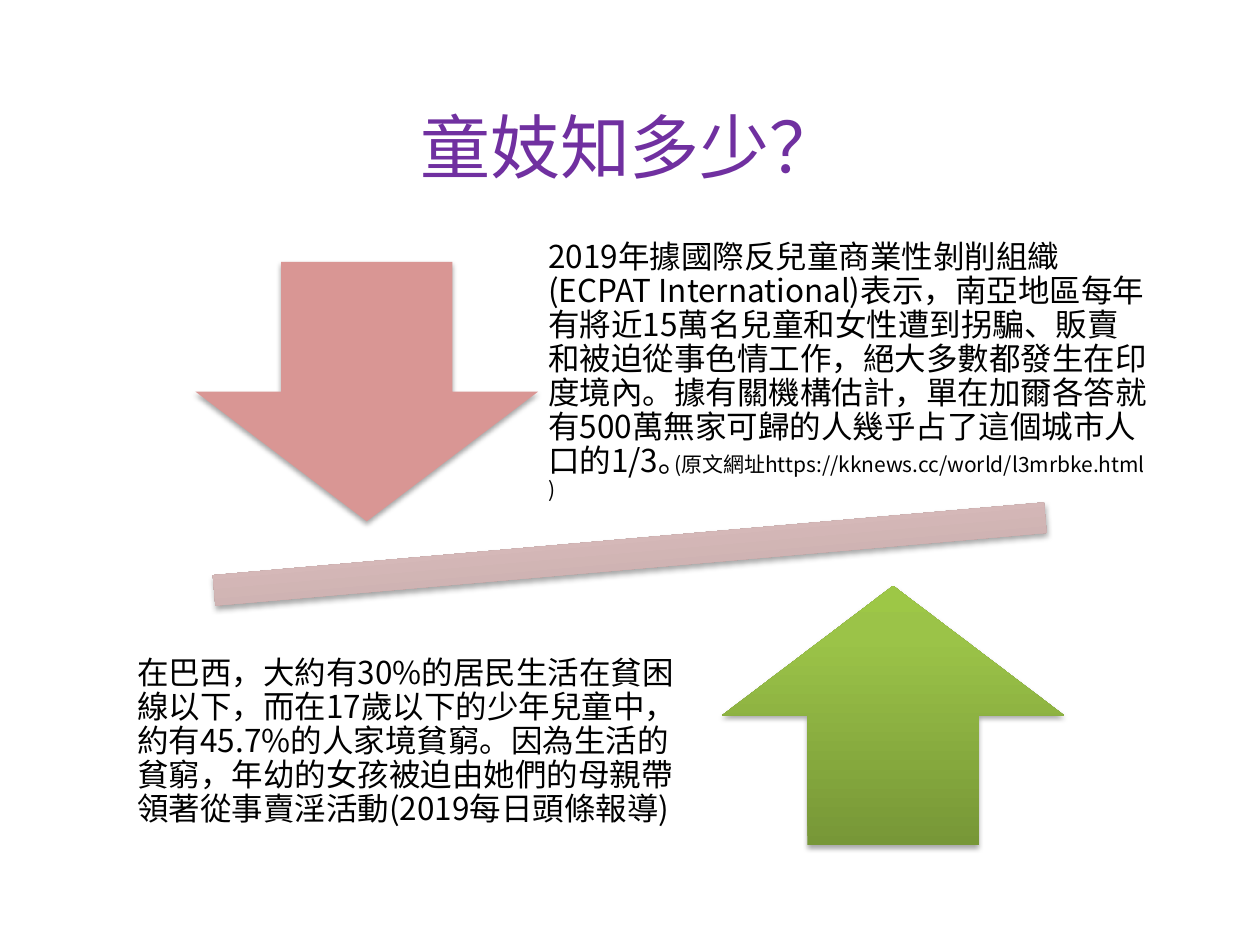
from copy import deepcopy

from lxml import etree
from pptx import Presentation
from pptx.dml.color import RGBColor
from pptx.enum.shapes import MSO_SHAPE
from pptx.enum.text import MSO_ANCHOR, PP_ALIGN
from pptx.oxml.ns import qn
from pptx.util import Cm, Pt

DOWN = MSO_SHAPE.DOWN_ARROW
UP = MSO_SHAPE.UP_ARROW
BAR = MSO_SHAPE.MATH_MINUS
MIDDLE = MSO_ANCHOR.MIDDLE
CENTER = PP_ALIGN.CENTER
LEFT = PP_ALIGN.LEFT

FONT = "Noto Sans CJK SC"
COLORS = {
    "title": "7030A0",
    "text": "000000",
    "shadow": "000000",
    "down": "D99694",
    "bar": ["B09998", "E5C6C6", "E6C7C6"],
    "up": ["779737", "9BC348", "9DC746"],
}
STOPS = [0, 0.8, 1]
ARROW = (6.91, 5.23)

ASIA = (
    "2019年據國際反兒童商業性剝削組織(ECPAT International)表示，"
    "南亞地區每年有將近15萬名兒童和女性遭到拐騙、販賣和被迫從事色情工作，"
    "絕大多數都發生在印度境內。據有關機構估計，"
    "單在加爾各答就有500萬無家可歸的人幾乎占了這個城市人口的1/3｡"
)
SOURCE = "(原文網址https://kknews.cc/world/l3mrbke.html )"
BRAZIL = (
    "在巴西，大約有30%的居民生活在貧困線以下，"
    "而在17歲以下的少年兒童中，約有45.7%的人家境貧窮。"
    "因為生活的貧窮，年幼的女孩被迫由她們的母親帶領著從事賣淫活動"
    "(2019每日頭條報導)"
)


def rgb(key):
    return RGBColor.from_string(COLORS.get(key, key))


class Deck:
    def __init__(self):
        self.prs = Presentation()
        self.prs.slide_width = Cm(25.4)
        self.prs.slide_height = Cm(19.05)
        self.slide = self.prs.slides.add_slide(self.prs.slide_layouts[5])

    def text(self, para, runs, color):
        """Add (text, size) pairs as runs of one paragraph."""
        for text, size in runs:
            run = para.add_run()
            run.text = text
            run.font.size = Pt(size)
            run.font.name = FONT
            run.font.color.rgb = rgb(color)
            east = etree.SubElement(run.font._element, qn("a:ea"))
            east.set("typeface", FONT)

    def title(self, box, text):
        shape = self.slide.shapes.title
        shape.left, shape.top, shape.width, shape.height = map(Cm, box)
        shape.text_frame.vertical_anchor = MIDDLE
        para = shape.text_frame.paragraphs[0]
        para.alignment = CENTER
        self.text(para, [(text, 40)], "title")

    def note(self, box, runs):
        frame = self.slide.shapes.add_textbox(*map(Cm, box)).text_frame
        frame.word_wrap = True
        frame.vertical_anchor = MIDDLE
        frame.margin_left = frame.margin_right = Cm(0.36)
        frame.margin_top = frame.margin_bottom = Cm(0.36)
        para = frame.paragraphs[0]
        para.alignment = LEFT
        para.line_spacing = 0.9
        self.text(para, runs, "text")

    def shape(self, kind, box, color, turn=0):
        shape = self.slide.shapes.add_shape(kind, *map(Cm, box))
        shape.rotation = turn
        shape.line.fill.background()
        if isinstance(COLORS[color], list):
            self.blend(shape, COLORS[color])
        else:
            shape.fill.solid()
            shape.fill.fore_color.rgb = rgb(color)
        self.shade(shape)

    def blend(self, shape, tones):
        """Fill with a gradient that runs from bottom to top."""
        fill = shape.fill
        fill.gradient()
        fill.gradient_angle = 90
        stops = shape._element.spPr.find(".//" + qn("a:gsLst"))
        stops.append(deepcopy(stops[-1]))
        for stop, place, tone in zip(fill.gradient_stops, STOPS, tones):
            stop.position = place
            stop.color.rgb = rgb(tone)

    def shade(self, shape):
        """Give a soft shadow below the shape."""
        shape.shadow.inherit = False
        effects = shape._element.spPr.find(qn("a:effectLst"))
        outer = etree.SubElement(
            effects, qn("a:outerShdw"), blurRad=str(Pt(3.1)),
            dist=str(Pt(1.8)), dir="5400000", rotWithShape="0")
        tone = etree.SubElement(outer, qn("a:srgbClr"), val=COLORS["shadow"])
        etree.SubElement(tone, qn("a:alpha"), val="35000")


def main():
    deck = Deck()
    deck.title((1.27, 1.35, 22.86, 3.18), "童妓知多少？")
    deck.shape(BAR, (1.25, 9.86, 22.89, 2.62), "bar", turn=355)
    deck.shape(DOWN, (3.94, 5.28, *ARROW), "down")
    deck.note((10.69, 4.93, 12.85, 5.11), [(ASIA, 18), (SOURCE, 12)])
    deck.shape(UP, (14.55, 11.81, *ARROW), "up")
    deck.note((2.41, 12.22, 11.81, 5.49), [(BRAZIL, 18)])
    deck.prs.save("out.pptx")


if __name__ == "__main__":
    main()
